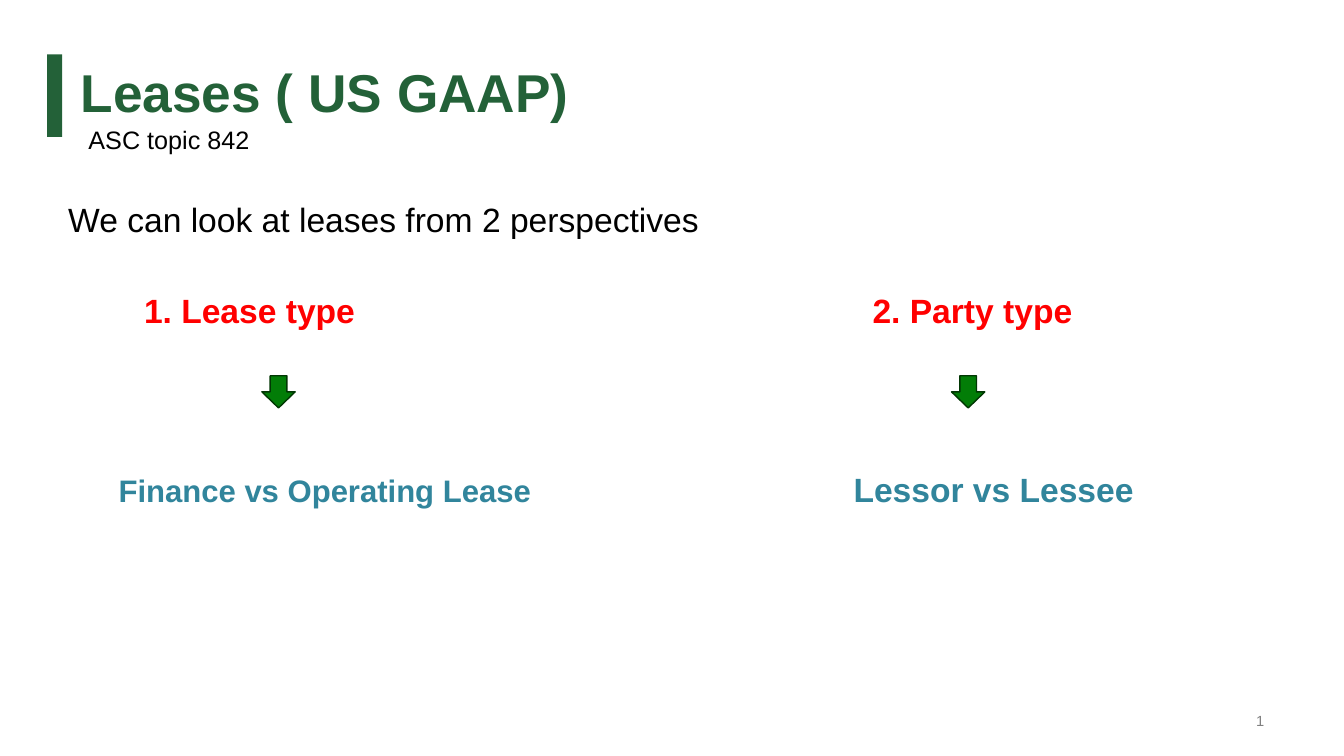
from pptx import Presentation
from pptx.dml.color import RGBColor
from pptx.enum.shapes import MSO_SHAPE
from pptx.enum.text import MSO_ANCHOR, MSO_AUTO_SIZE, PP_ALIGN
from pptx.util import Cm, Pt

RECT, ARROW = MSO_SHAPE.RECTANGLE, MSO_SHAPE.DOWN_ARROW
TOP, MIDDLE, BOTTOM = MSO_ANCHOR.TOP, MSO_ANCHOR.MIDDLE, MSO_ANCHOR.BOTTOM
LEFT, RIGHT = PP_ALIGN.LEFT, PP_ALIGN.RIGHT
FIXED = MSO_AUTO_SIZE.NONE

GREEN, RED, TEAL = "236138", "FF0000", "31859C"
BLACK, GRAY = "000000", "808080"


def tint(color, code):
    """Give a colour format the colour of a hex string."""
    color.rgb = RGBColor.from_string(code)


def write(shape, text, size, code, bold=False, anchor=TOP, align=LEFT):
    """Fill a shape with one styled paragraph and return it."""
    frame = shape.text_frame
    frame.text = text
    frame.word_wrap = True
    frame.auto_size = FIXED
    frame.vertical_anchor = anchor
    para = frame.paragraphs[0]
    para.alignment = align
    para.font.name = "Arial"
    para.font.size = Pt(size)
    para.font.bold = bold
    tint(para.font.color, code)
    return para


def label(slide, box, *args, **style):
    """Add a text box in the given box, in cm, and return its paragraph."""
    shape = slide.shapes.add_textbox(*map(Cm, box))
    return write(shape, *args, **style)


def block(slide, kind, box, fill, line=None):
    """Add a filled preset shape with an optional outline."""
    shape = slide.shapes.add_shape(kind, *map(Cm, box))
    shape.shadow.inherit = False
    shape.fill.solid()
    tint(shape.fill.fore_color, fill)
    if line:
        tint(shape.line.color, line)
        shape.line.width = Pt(1)
    else:
        shape.line.fill.background()


def header(slide, left, top, width, height):
    """Place the accent bar, the title and the subtitle."""
    block(slide, RECT, (left, top, 0.38, height), GREEN)
    title = slide.shapes.title
    title.left, title.top = Cm(left + 0.59), Cm(top)
    title.width, title.height = Cm(width - 0.59), Cm(height)
    para = write(title, "Leases ( US GAAP)", 38, GREEN, True, MIDDLE)
    para.line_spacing = 0.9
    label(slide, (left + 0.79, top + 1.63, 16.94, 1.02),
          "ASC topic 842", 18, BLACK)


def column(slide, left, top, width, head, body, size, indent, shift):
    """Place a heading, an arrow below it and the pair it leads to."""
    rows = ((head, 24, RED, indent, 0), (body, size, TEAL, 0, 4.5))
    for text, points, code, inset, drop in rows:
        box = (left + inset, top + drop, width - inset, 1.17)
        para = label(slide, box, text, points, code, True, BOTTOM)
        para.line_spacing = 0.9
        para.space_before = Pt(10)
    block(slide, ARROW, (left + shift, top + 2.18, 0.84, 0.81),
          "027D07", "013703")


def main():
    """Build the slide and save it."""
    deck = Presentation()
    deck.slide_width, deck.slide_height = Cm(33.87), Cm(19.05)
    slide = deck.slides.add_slide(deck.slide_layouts[5])
    header(slide, 1.19, 1.37, 30.36, 2.08)
    label(slide, (1.47, 4.9, 16.94, 1.27),
          "We can look at leases from 2 perspectives", 24, BLACK)
    column(slide, 2.74, 7.29, 11.23, "1. Lease type",
           "Finance vs Operating Lease", 22.2, 0.64, 3.86)
    column(slide, 21.26, 7.29, 11.23, "2. Party type",
           "Lessor vs Lessee", 24, 0.48, 2.72)
    label(slide, (24.49, 17.65, 7.62, 1.02), "1", 10.5, GRAY,
          anchor=MIDDLE, align=RIGHT)
    deck.save("out.pptx")


if __name__ == "__main__":
    main()
